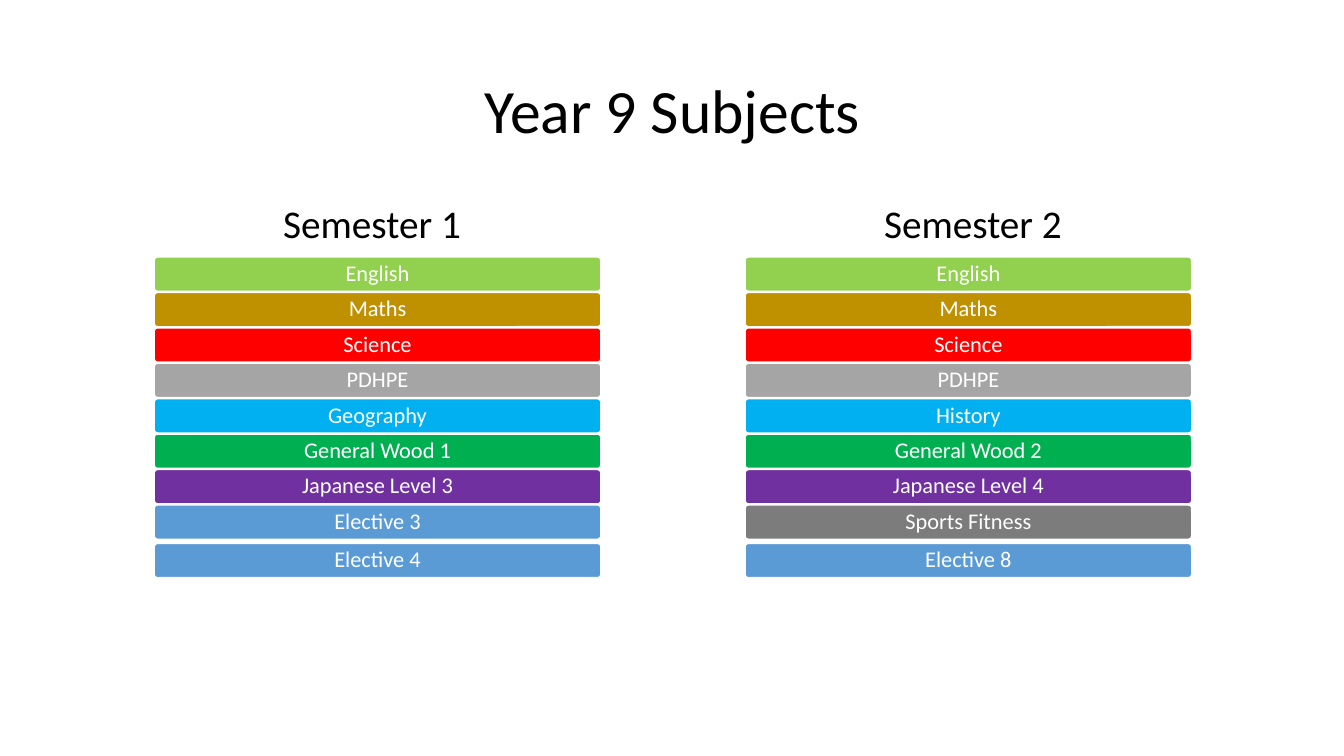
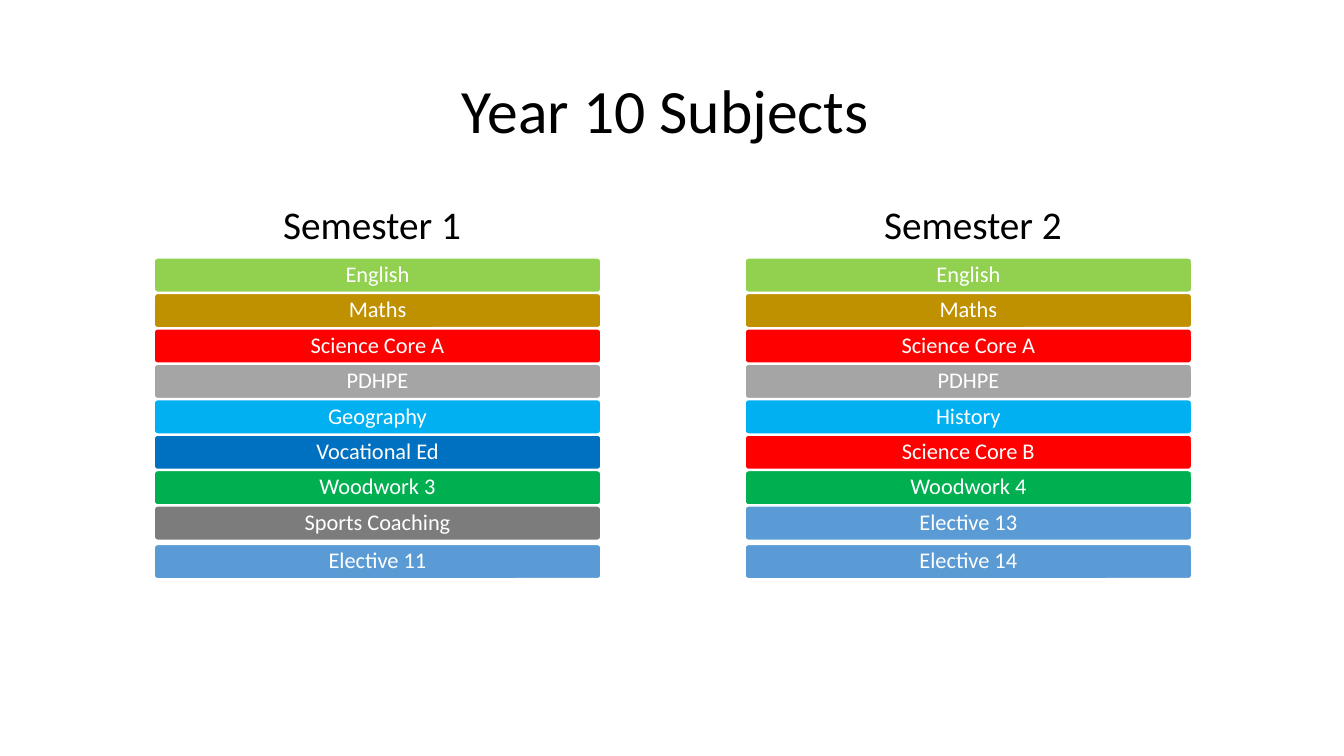
from pptx import Presentation
from pptx import util as u
from pptx.dml import color
from pptx.enum import shapes, text

FONT = "Calibri"
HEX = {
    "black": "000000", "white": "FFFFFF", "lime": "92D050",
    "gold": "BF9000", "red": "FF0000", "silver": "A5A5A5",
    "sky": "00B0F0", "blue": "0070C0", "green": "00B050",
    "purple": "7030A0", "grey": "7C7C7C", "steel": "5B9BD5",
}

# Column grid, in inches
HEADS = (0.92, 6.88)       # left edges of the headings
BARS = (1.53, 7.39)        # left edges of the bars
DROP = 1.11                # heading top to first bar
PITCH = 2.46 / 7           # bar to bar
GAP = 0.03                 # extra space above the last bar

CORE = [("English", "lime"), ("Maths", "gold")]
SPORT = [("PDHPE", "silver")]

# Title, heading top and the subjects of each semester
YEARS = [
    ("Year 9 Subjects", 1.44, [
        CORE + [("Science", "red")] + SPORT + [
            ("Geography", "sky"), ("General Wood 1", "green"),
            ("Japanese Level 3", "purple"), ("Elective 3", "steel"),
            ("Elective 4", "steel")],
        CORE + [("Science", "red")] + SPORT + [
            ("History", "sky"), ("General Wood 2", "green"),
            ("Japanese Level 4", "purple"), ("Sports Fitness", "grey"),
            ("Elective 8", "steel")],
    ]),
    ("Year 10 Subjects ", 1.45, [
        CORE + [("Science Core A", "red")] + SPORT + [
            ("Geography", "sky"), ("Vocational Ed", "blue"),
            ("Woodwork 3", "green"), ("Sports Coaching", "grey"),
            ("Elective 11", "steel")],
        CORE + [("Science Core A", "red")] + SPORT + [
            ("History", "sky"), ("Science Core B", "red"),
            ("Woodwork 4", "green"), ("Elective 13", "steel"),
            ("Elective 14", "steel")],
    ]),
]


def rgb(name):
    return color.RGBColor.from_string(HEX[name])


def write(shape, words, size, ink):
    """Set one centred line of text in a shape."""
    frame = shape.text_frame
    frame.word_wrap = True
    frame.vertical_anchor = text.MSO_ANCHOR.MIDDLE
    frame.margin_left = frame.margin_right = u.Inches(0.05)
    frame.margin_top = frame.margin_bottom = u.Inches(0.03)
    para = frame.paragraphs[0]
    para.text = words
    para.alignment = text.PP_ALIGN.CENTER
    para.line_spacing = 0.9
    para.font.name = FONT
    para.font.size = u.Pt(size)
    para.font.color.rgb = rgb(ink)


def label(slide, words, box, size):
    area = slide.shapes.add_textbox(*map(u.Inches, box))
    write(area, words, size, "black")


def bar(slide, words, fill, left, top):
    shape = slide.shapes.add_shape(
        shapes.MSO_SHAPE.ROUNDED_RECTANGLE,
        *map(u.Inches, (left, top, 4.43, 0.34)))
    shape.adjustments[0] = 0.1
    shape.shadow.inherit = False
    shape.fill.solid()
    shape.fill.fore_color.rgb = rgb(fill)
    shape.line.color.rgb = rgb("white")
    shape.line.width = u.Pt(1)
    write(shape, words, 16, "white")


def column(slide, index, top, subjects):
    """Draw a semester heading with its stack of bars."""
    label(slide, f"Semester {index + 1}", (HEADS[index], top, 5.54, 1.59), 28)
    last = len(subjects) - 1
    for row, (name, fill) in enumerate(subjects):
        extra = GAP if row == last else 0
        bar(slide, name, fill, BARS[index], top + DROP + row * PITCH + extra)


def main():
    deck = Presentation()
    deck.slide_width = u.Inches(13.33)
    deck.slide_height = u.Inches(7.5)
    for title, top, terms in YEARS:
        slide = deck.slides.add_slide(deck.slide_layouts[6])
        label(slide, title, (0.92, 0.4, 11.5, 1.45), 44)
        for index, subjects in enumerate(terms):
            column(slide, index, top, subjects)
    deck.save("out.pptx")


if __name__ == "__main__":
    main()
